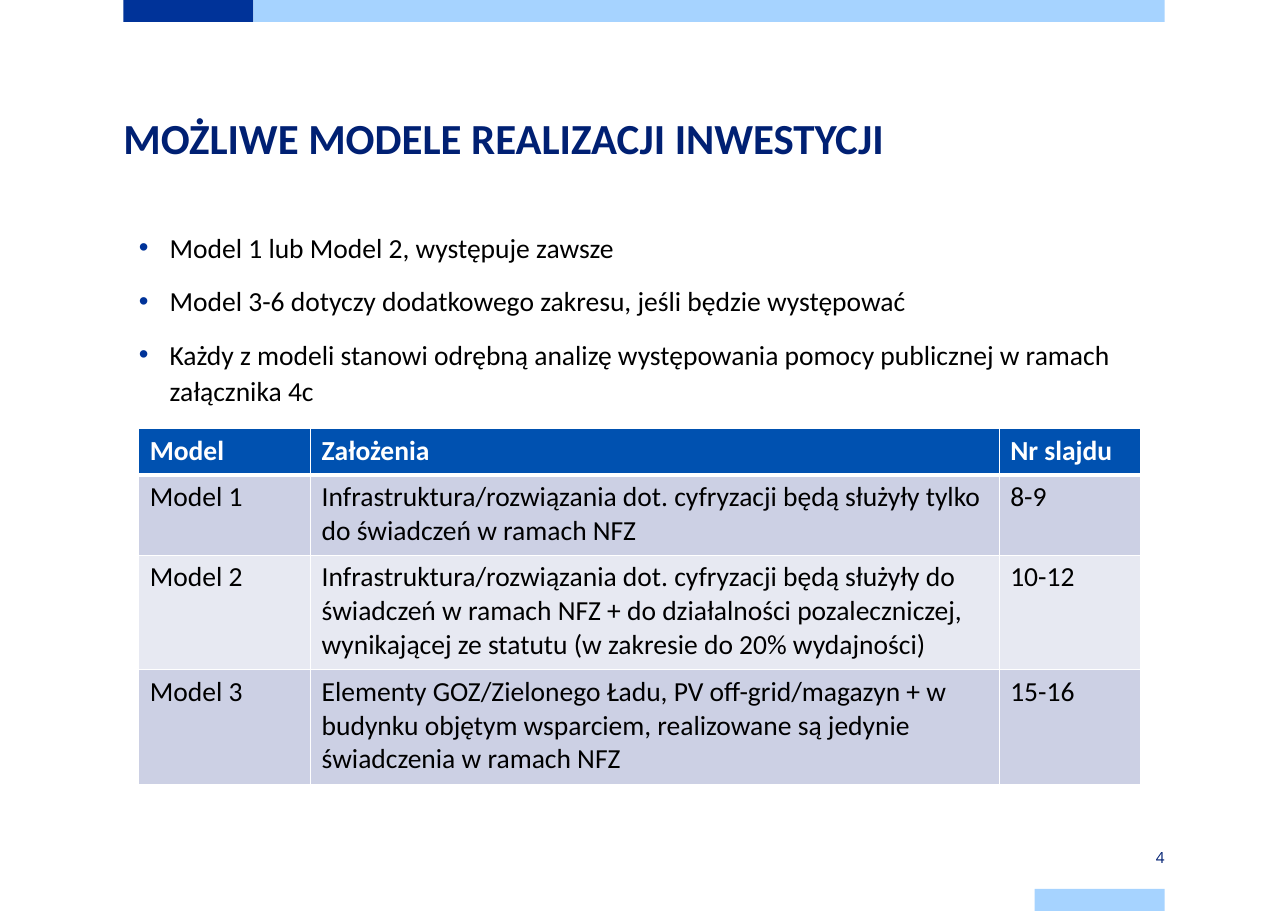
from pptx import Presentation
from pptx.dml.color import RGBColor
from pptx.enum.shapes import MSO_SHAPE as Preset
from pptx.enum.text import MSO_ANCHOR as Anchor, PP_ALIGN as Align
from pptx.oxml import parse_xml
from pptx.oxml.ns import nsdecls
from pptx.util import Inches, Pt

NAVY = RGBColor(0x00, 0x20, 0x73)
BLUE = RGBColor(0x00, 0x33, 0x99)
SKY = RGBColor(0xA6, 0xD3, 0xFF)
HEADER = RGBColor(0x00, 0x51, 0xB0)
BAND_DARK = RGBColor(0xCC, 0xD0, 0xE4)
BAND_LIGHT = RGBColor(0xE7, 0xE9, 0xF2)
BLACK = RGBColor(0, 0, 0)
WHITE = RGBColor(0xFF, 0xFF, 0xFF)

BARS = [
    (1.12, 0, 1.18, BLUE),
    (2.3, 0, 8.27, SKY),
    (9.39, 8.07, 1.18, SKY),
]
BULLETS = [
    "Model 1 lub Model 2, występuje zawsze",
    "Model 3-6 dotyczy dodatkowego zakresu, jeśli będzie występować",
    "Każdy z modeli stanowi odrębną analizę występowania pomocy publicznej w ramach załącznika 4c",
]
COLUMN_WIDTHS = [1.56, 6.25, 1.28]
ROW_HEIGHTS = [0.42, 0.73, 1.04, 1.04]
MODELS = [
    ("Model", "Założenia", "Nr slajdu"),
    ("Model 1", "Infrastruktura/rozwiązania dot. cyfryzacji będą służyły tylko "
     "do świadczeń w ramach NFZ", "8-9"),
    ("Model 2", "Infrastruktura/rozwiązania dot. cyfryzacji będą służyły do "
     "świadczeń w ramach NFZ + do działalności pozaleczniczej, "
     "wynikającej ze statutu (w zakresie do 20% wydajności)", "10-12"),
    ("Model 3", "Elementy GOZ/Zielonego Ładu, PV off-grid/magazyn + w "
     "budynku objętym wsparciem, realizowane są jedynie "
     "świadczenia w ramach NFZ", "15-16"),
]


class SlideBuilder:
    """Draw styled elements on the current slide."""

    body = {"name": "Calibri", "size": Pt(18), "bold": False}

    def __init__(self, slide):
        self.slide = slide

    def apply(self, target, values):
        for name, value in values.items():
            setattr(target, name, value)

    def add_text(self, paragraph, text, color, **changes):
        run = paragraph.add_run()
        run.text = text
        self.apply(run.font, {**self.body, **changes})
        run.font.color.rgb = color

    def bar(self, left, top, width, color):
        shape = self.slide.shapes.add_shape(
            Preset.RECTANGLE, Inches(left), Inches(top), Inches(width), Inches(0.2))
        shape.shadow.inherit = False
        shape.fill.solid()
        shape.fill.fore_color.rgb = color
        shape.line.fill.background()

    def text_frame(self, left, top, width, height, **changes):
        shape = self.slide.shapes.add_textbox(
            Inches(left), Inches(top), Inches(width), Inches(height))
        frame = shape.text_frame
        margins = {f"margin_{side}": 0 for side in ("left", "right", "top", "bottom")}
        self.apply(frame, {"word_wrap": True, **margins, **changes})
        return frame

    def title(self, text):
        paragraph = self.text_frame(1.12, 0.98, 9.45, 1.18).paragraphs[0]
        paragraph.line_spacing = Pt(36)
        self.add_text(paragraph, text, NAVY, size=Pt(28), bold=True)

    def bullets(self, items):
        frame = self.text_frame(1.26, 2.06, 9.45, 1.75)
        for index, item in enumerate(items):
            paragraph = frame.add_paragraph() if index else frame.paragraphs[0]
            properties = paragraph._p.get_or_add_pPr()
            properties.set("marL", str(Inches(0.28)))
            properties.set("indent", str(Inches(-0.28)))
            for element in (f'<a:buClr {nsdecls("a")}><a:srgbClr val="{BLUE}"/></a:buClr>',
                            f'<a:buFont {nsdecls("a")} typeface="Arial"/>',
                            f'<a:buChar {nsdecls("a")} char="•"/>'):
                properties.append(parse_xml(element))
            self.apply(paragraph, {"line_spacing": Pt(24),
                                   "space_before": Pt(11 if index else 0)})
            self.add_text(paragraph, item, BLACK)

    def borders(self, cell, top, bottom):
        properties = cell._tc.get_or_add_tcPr()
        for side, width in (("L", 1), ("R", 1), ("T", top), ("B", bottom)):
            properties.append(parse_xml(
                f'<a:ln{side} {nsdecls("a")} w="{Pt(width)}"><a:solidFill>'
                f'<a:srgbClr val="{WHITE}"/></a:solidFill></a:ln{side}>'))

    def table(self, rows):
        table = self.slide.shapes.add_table(
            len(rows), len(COLUMN_WIDTHS), Inches(1.26), Inches(3.89),
            Inches(sum(COLUMN_WIDTHS)), Inches(sum(ROW_HEIGHTS))).table
        table.horz_banding = False
        for column, width in zip(table.columns, COLUMN_WIDTHS):
            column.width = Inches(width)
        for index, (row, height, texts) in enumerate(zip(table.rows, ROW_HEIGHTS, rows)):
            row.height = Inches(height)
            is_header = index == 0
            band = BAND_DARK if index % 2 else BAND_LIGHT
            for cell, text in zip(row.cells, texts):
                self.borders(cell, 3 if index == 1 else 1, 3 if is_header else 1)
                cell.fill.solid()
                cell.fill.fore_color.rgb = HEADER if is_header else band
                self.add_text(cell.text_frame.paragraphs[0], text,
                              WHITE if is_header else BLACK, bold=is_header)

    def page_number(self, text):
        frame = self.text_frame(9.39, 7.68, 1.18, 0.2, vertical_anchor=Anchor.MIDDLE)
        paragraph = frame.paragraphs[0]
        paragraph.alignment = Align.RIGHT
        self.add_text(paragraph, text, NAVY, name="Open Sans", size=Pt(10))


def main():
    presentation = Presentation()
    presentation.slide_width = Inches(11.69)
    presentation.slide_height = Inches(8.27)
    builder = SlideBuilder(presentation.slides.add_slide(presentation.slide_layouts[6]))
    for bar in BARS:
        builder.bar(*bar)
    builder.table(MODELS)
    builder.bullets(BULLETS)
    builder.title("MOŻLIWE MODELE REALIZACJI INWESTYCJI")
    builder.page_number("4")
    presentation.save("out.pptx")


if __name__ == "__main__":
    main()
